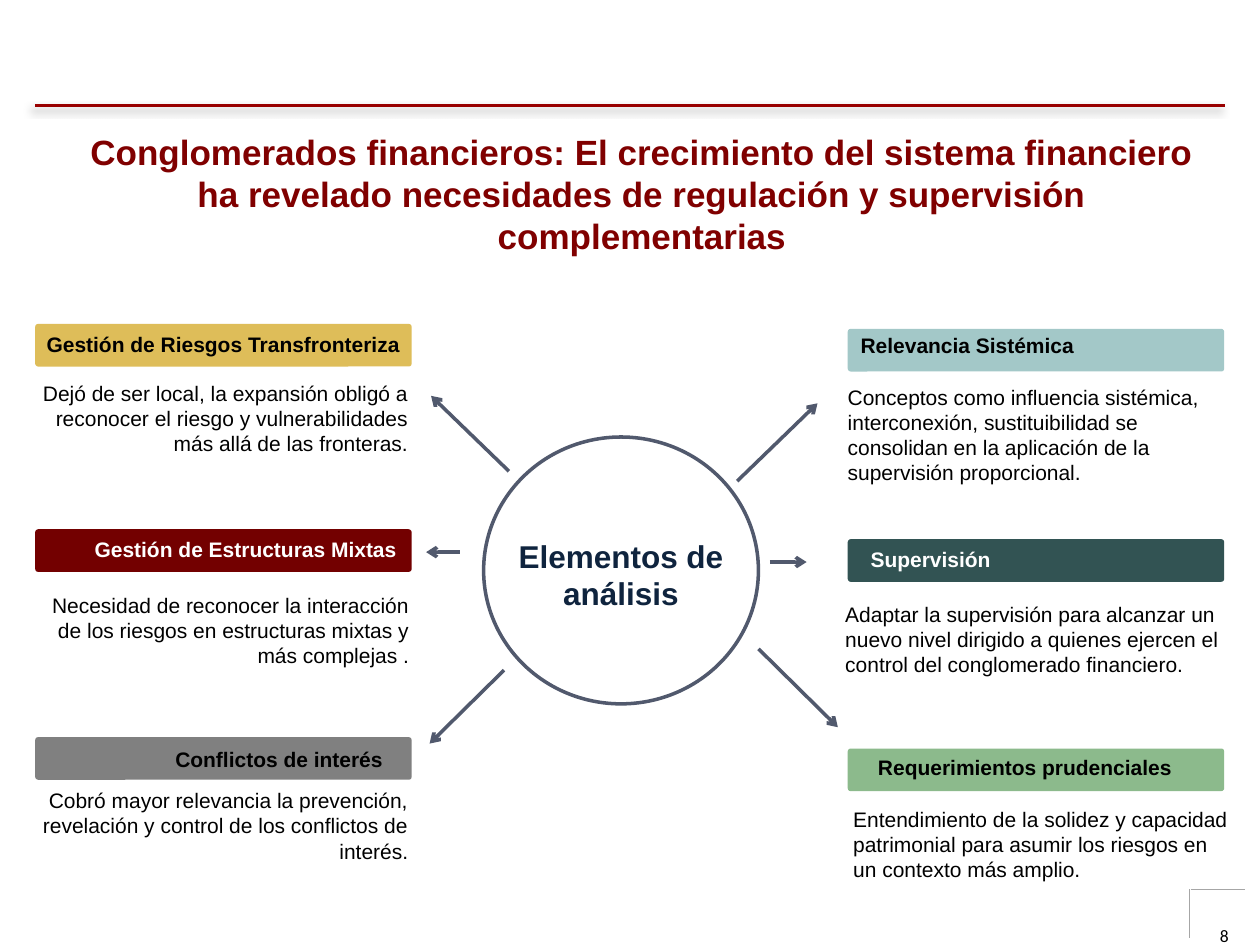
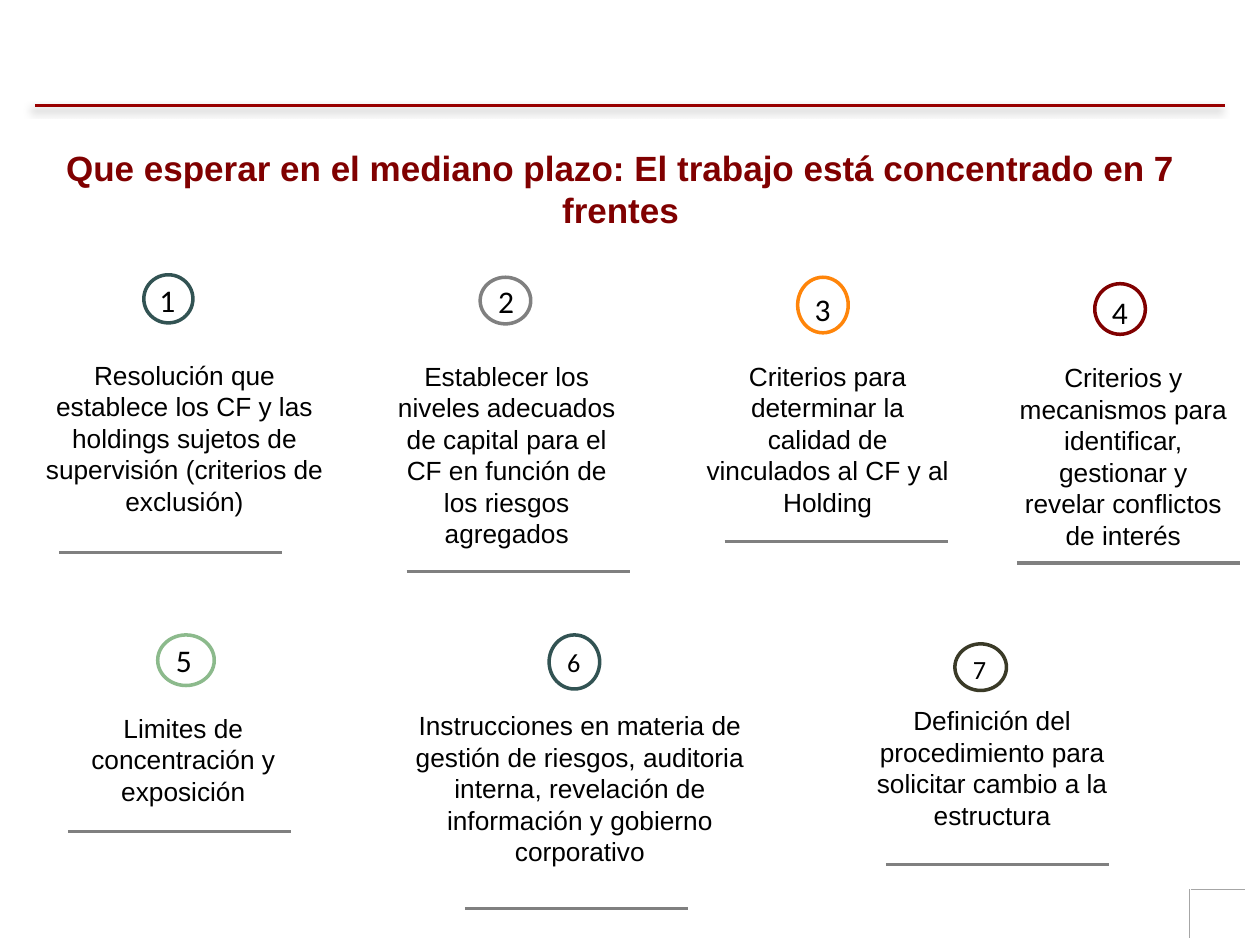
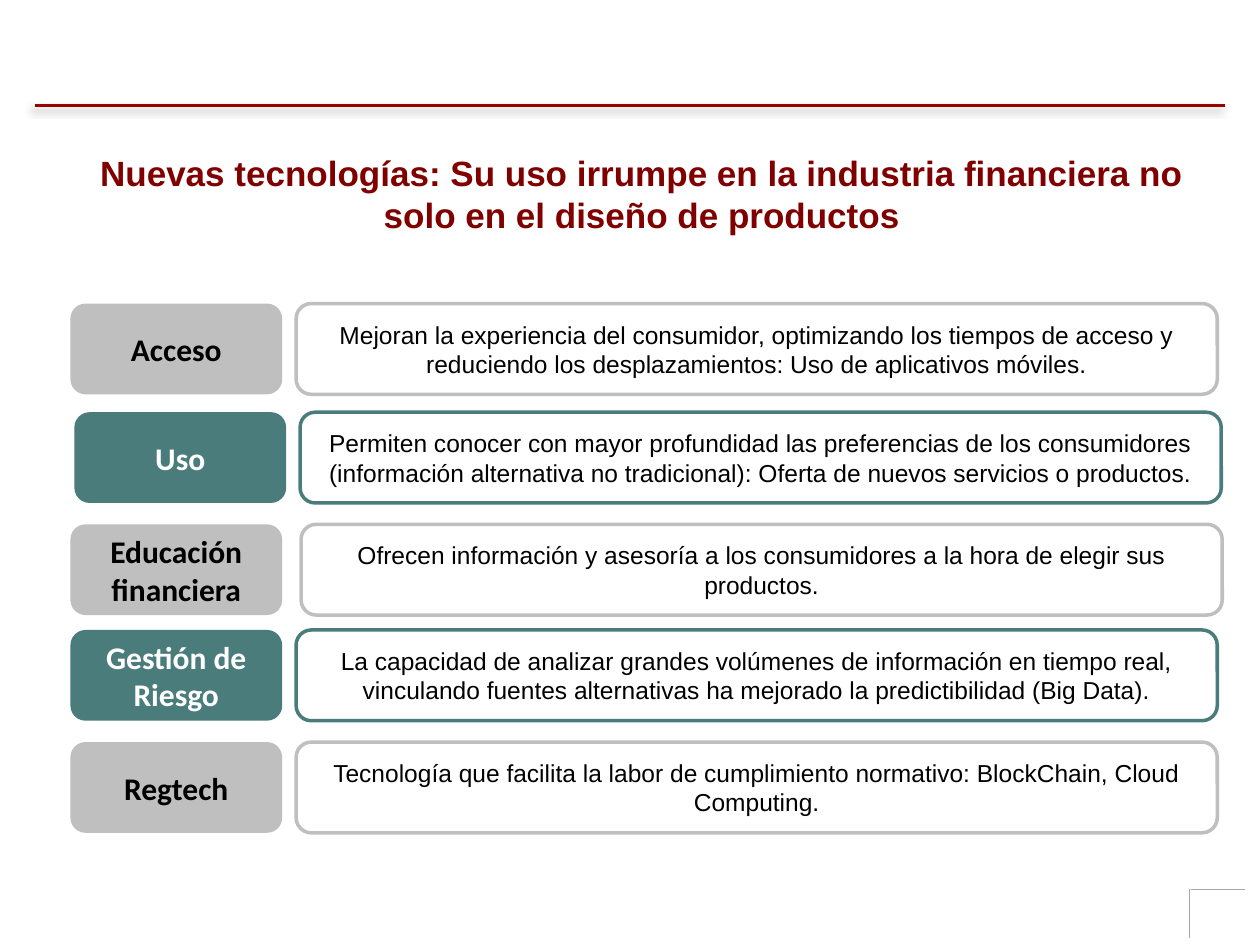
from lxml import etree
from pptx import Presentation
from pptx.dml.color import RGBColor
from pptx.enum.shapes import MSO_CONNECTOR, MSO_SHAPE
from pptx.enum.text import MSO_ANCHOR, PP_ALIGN
from pptx.oxml.ns import qn
from pptx.util import Cm, Pt

LEFT, CENTER, RIGHT = PP_ALIGN.LEFT, PP_ALIGN.CENTER, PP_ALIGN.RIGHT
TOP, MIDDLE = MSO_ANCHOR.TOP, MSO_ANCHOR.MIDDLE
OVAL, ROUNDED = MSO_SHAPE.OVAL, MSO_SHAPE.ROUNDED_RECTANGLE
STRAIGHT = MSO_CONNECTOR.STRAIGHT

COLORS = {
    "black": "000000", "white": "FFFFFF", "title": "800000", "rule": "990000",
    "corner": "A6A6A6", "slate": "51596D", "navy": "0F243E", "ice": "A3C8C8",
    "pine": "325353", "green": "8CBA8C", "gold": "DEBD59", "wine": "730000",
    "gray": "808080", "orange": "FF850A", "olive": "3A3A27",
    "silver": "BFBFBF", "teal": "4B7C7C",
}
RGB = {name: RGBColor.from_string(value) for name, value in COLORS.items()}


def add_box(slide, box, text="", size=12, color="black", font="Arial", bold=False,
            align=LEFT, anchor=TOP, inset=None, wrap=True, kind=None,
            fill=None, outline=None):
    """Add a text box, or a preset shape when kind is given; box is in cm."""
    bounds = [Cm(value) for value in box]
    if kind is None:
        shape = slide.shapes.add_textbox(*bounds)
    else:
        shape = slide.shapes.add_shape(kind, *bounds)
        shape.shadow.inherit = False
        if fill:
            shape.fill.solid()
            shape.fill.fore_color.rgb = RGB[fill]
        else:
            shape.fill.background()
        if outline:
            shape.line.color.rgb = RGB[outline]
            shape.line.width = Pt(2)
        else:
            shape.line.fill.background()
    if text:
        frame = shape.text_frame
        frame.text = text
        frame.word_wrap = wrap
        frame.vertical_anchor = anchor
        if inset is not None:
            frame.margin_left = frame.margin_right = Cm(inset)
            frame.margin_top = frame.margin_bottom = Cm(inset)
        for paragraph in frame.paragraphs:
            paragraph.alignment = align
            paragraph.font.name = font
            paragraph.font.size = Pt(size)
            paragraph.font.bold = bold
            paragraph.font.color.rgb = RGB[color]
    return shape


def add_line(slide, ends, color, width, arrow=False, shadow=False):
    connector = slide.shapes.add_connector(STRAIGHT, *[Cm(value) for value in ends])
    connector.line.color.rgb = RGB[color]
    connector.line.width = Pt(width)
    properties = connector.element.spPr
    if arrow:
        etree.SubElement(properties.find(qn("a:ln")), qn("a:tailEnd"), type="arrow")
    effects = etree.SubElement(properties, qn("a:effectLst"))
    if shadow:
        outer = etree.SubElement(effects, qn("a:outerShdw"), blurRad=str(Pt(4)),
                                 dist=str(Pt(3)), dir="8100000", rotWithShape="0")
        tint = etree.SubElement(outer, qn("a:srgbClr"), val=COLORS["black"])
        etree.SubElement(tint, qn("a:alpha"), val="40000")


prs = Presentation()
prs.slide_width, prs.slide_height = Cm(25.4), Cm(19.05)

# Shared frame and titles: left, top, height, text
titles = [
    (1.14, 2.51, 2.82, "Conglomerados financieros: El crecimiento del sistema financiero "
     "ha revelado necesidades de regulación y supervisión complementarias"),
    (0.71, 2.82, 1.96, "Que esperar en el mediano plazo: El trabajo está concentrado "
     "en 7 frentes"),
    (1.14, 2.92, 1.96, "Nuevas tecnologías: Su uso irrumpe en la industria financiera "
     "no solo en el diseño de productos"),
]
slides = []
for left, top, height, title in titles:
    slide = prs.slides.add_slide(prs.slide_layouts[6])
    add_line(slide, (0.71, 2.13, 24.69, 2.13), "rule", 2, shadow=True)
    add_line(slide, (24, 17.93, 25.1, 17.93), "corner", 0.25)
    add_line(slide, (23.98, 17.93, 23.98, 18.9), "corner", 0.25)
    add_box(slide, (left, top, 23.6, height), title, 20, "title", bold=True, align=CENTER)
    slides.append(slide)
conglomerates, fronts_slide, technologies = slides

# Slide 1: elements of analysis around a circle
add_box(conglomerates, (23.09, 18.52, 1.93, 0.53), "8", 10, font="Calibri", align=RIGHT)
add_box(conglomerates, (9.75, 8.81, 5.54, 5.38), kind=OVAL, fill="white", outline="slate")
add_box(conglomerates, (10.36, 10.82, 4.32, 1.55), "Elementos de análisis", 18, "navy",
        bold=True, align=CENTER, inset=0)

# Bar left, top, fill; heading left, top, width, colour, alignment, text;
# body left, top, alignment, text; arrow ends
elements = [
    (0.71, 6.53, "gold",
     (0.89, 6.63, 7.34, "black", LEFT, "Gestión de Riesgos Transfronteriza"),
     (0.64, 7.67, RIGHT, "Dejó de ser local, la expansión obligó a reconocer el riesgo y "
      "vulnerabilidades más allá de las fronteras."),
     (10.26, 9.5, 8.69, 7.98)),
    (0.71, 10.67, "wine",
     (1.14, 10.77, 6.91, "white", RIGHT, "Gestión de Estructuras Mixtas"),
     (0.66, 11.94, RIGHT, "Necesidad de reconocer la interacción de los riesgos en "
      "estructuras mixtas y más complejas ."),
     (9.27, 11.13, 8.59, 11.13)),
    (0.71, 14.86, "gray",
     (1.14, 14.99, 6.63, "black", RIGHT, "Conflictos de interés"),
     (0.64, 15.88, RIGHT, "Cobró mayor relevancia la prevención, revelación y control de "
      "los conflictos de interés."),
     (10.16, 13.51, 8.66, 14.99)),
    (17.09, 6.63, "ice",
     (17.3, 6.65, 4.62, "black", LEFT, "Relevancia Sistémica"),
     (17.09, 7.75, LEFT, "Conceptos como influencia sistémica, interconexión, "
      "sustituibilidad se consolidan en la aplicación de la supervisión proporcional."),
     (14.86, 9.7, 16.48, 8.13)),
    (17.09, 10.87, "pine",
     (17.5, 10.97, 5, "white", LEFT, "Supervisión"),
     (17.04, 12.12, LEFT, "Adaptar la supervisión para alcanzar un nuevo nivel dirigido a "
      "quienes ejercen el control del conglomerado financiero."),
     (15.52, 11.33, 16.26, 11.33)),
    (17.09, 15.09, "green",
     (17.65, 15.16, 6.65, "black", LEFT, "Requerimientos prudenciales"),
     (17.2, 16.26, LEFT, "Entendimiento de la solidez y capacidad patrimonial para asumir "
      "los riesgos en un contexto más amplio."),
     (15.29, 13.08, 16.89, 14.66)),
]
for left, top, fill, heading, body, arrow_ends in elements:
    bar = add_box(conglomerates, (left, top, 7.59, 0.86), kind=ROUNDED, fill=fill)
    bar.adjustments[0] = 0.07
    x, y, width, color, align, text = heading
    add_box(conglomerates, (x, y, width, 0.61), text, color=color, bold=True, align=align,
            anchor=MIDDLE, inset=0.05)
    x, y, align, text = body
    add_box(conglomerates, (x, y, 7.59, 1.55), text, align=align, inset=0)
    add_line(conglomerates, arrow_ends, "slate", 2, arrow=True)

# Slide 2: ring colour and box, number left, top and size, text box, underline start, text
fronts = [
    ("pine", (2.9, 5.54, 0.99, 0.97), (3.15, 5.59, 18), (0.71, 7.24, 6.02, 3.2),
     (1.19, 11.13),
     "Resolución que establece los CF y las holdings sujetos de supervisión "
     "(criterios de exclusión)"),
    ("gray", (9.68, 5.59, 1.02, 0.94), (9.98, 5.61, 18), (7.8, 7.26, 4.83, 3.84),
     (8.2, 11.53),
     "Establecer los niveles adecuados de capital para el CF en función de los "
     "riesgos agregados"),
    ("orange", (16.08, 5.59, 1.02, 1.12), (16.36, 5.77, 18), (13.79, 7.26, 5.79, 3.2),
     (14.61, 10.92),
     "Criterios para\ndeterminar la\ncalidad de\nvinculados al CF y al Holding"),
    ("title", (22.07, 5.72, 1.02, 1.02), (22.35, 5.84, 18), (20.5, 7.29, 4.29, 3.84),
     (20.5, 11.35),
     "Criterios y mecanismos para identificar, gestionar y revelar conflictos de interés"),
    ("green", (3.18, 12.8, 1.14, 1.02), (3.48, 12.85, 18), (1.37, 14.35, 4.65, 1.93),
     (1.37, 16.76),
     "Limites de concentración y exposición"),
    ("pine", (11.07, 12.8, 1.02, 1.09), (11.38, 12.98, 15), (8.26, 14.3, 6.86, 3.2),
     (9.37, 18.31),
     "Instrucciones en materia de gestión de riesgos, auditoria interna, revelación "
     "de información y gobierno corporativo"),
    ("olive", (19.25, 12.98, 1.04, 0.94), (19.56, 13.11, 15), (17.42, 14.2, 5.16, 2.57),
     (17.86, 17.42),
     "Definición del procedimiento para solicitar cambio a la estructura"),
]
for number, (color, ring, digit, text_box, underline, text) in enumerate(fronts, 1):
    add_box(fronts_slide, ring, kind=OVAL, outline=color)
    x, y, size = digit
    add_box(fronts_slide, (x, y, size * 0.025, size * 0.05), str(number), size,
            font="Calibri", align=CENTER, anchor=MIDDLE, inset=0.05, wrap=False)
    add_box(fronts_slide, text_box, text, 15, align=CENTER, inset=0)
    x, y = underline
    add_line(fronts_slide, (x, y, x + 4.5, y), "gray", 1.75)

# Slide 3: top, area left, detail left, area, detail; rows alternate in colour
uses = [
    (6.12, 1.42, 5.97, "Acceso",
     "Mejoran la experiencia del consumidor, optimizando los tiempos de acceso y "
     "reduciendo los desplazamientos: Uso de aplicativos móviles."),
    (8.31, 1.5, 6.05, "Uso",
     "Permiten conocer con mayor profundidad las preferencias de los consumidores "
     "(información alternativa no tradicional): Oferta de nuevos servicios o productos."),
    (10.57, 1.42, 6.07, "Educación financiera",
     "Ofrecen información y asesoría a los consumidores a la hora de elegir sus productos."),
    (12.7, 1.42, 5.97, "Gestión de Riesgo",
     "La capacidad de analizar grandes volúmenes de información en tiempo real, "
     "vinculando fuentes alternativas ha mejorado la predictibilidad (Big Data)."),
    (14.96, 1.42, 5.97, "Regtech",
     "Tecnología que facilita la labor de cumplimiento normativo: BlockChain, "
     "Cloud Computing."),
]
for row, (top, area_left, detail_left, area, detail) in enumerate(uses):
    accent, area_color = [("silver", "black"), ("teal", "white")][row % 2]
    add_box(technologies, (area_left, top, 4.27, 1.83), area, 18, area_color, "Calibri",
            bold=True, align=CENTER, anchor=MIDDLE, kind=ROUNDED, fill=accent)
    add_box(technologies, (detail_left, top, 18.57, 1.83), detail, 14, align=CENTER,
            anchor=MIDDLE, kind=ROUNDED, fill="white", outline=accent)

prs.save("out.pptx")
